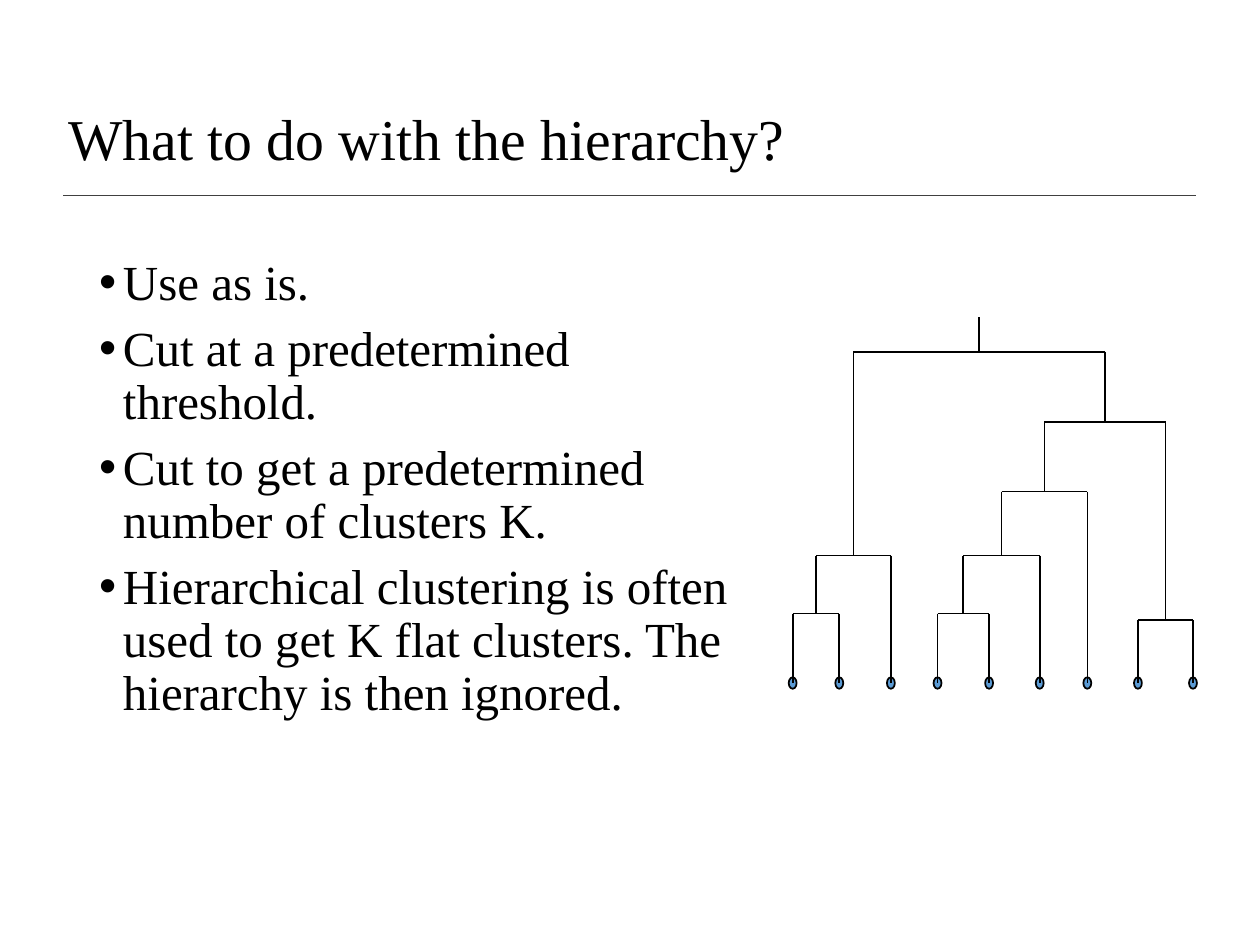
from lxml.etree import SubElement
from pptx import Presentation
from pptx.dml.color import RGBColor
from pptx.enum.shapes import MSO_CONNECTOR, MSO_SHAPE
from pptx.enum.text import MSO_ANCHOR as ANCHOR, PP_ALIGN as ALIGN
from pptx.oxml.ns import qn
from pptx.util import Cm, Pt

COLORS = {"text": "000000", "branch": "000000", "rule": "404040", "leaf": "5B9BD5"}
FONT = "Times New Roman"

TITLE = "What to do with the hierarchy?"
BULLETS = [
    "Use as is.",
    "Cut at a predetermined threshold.",
    "Cut to get a predetermined number of clusters K.",
    "Hierarchical clustering is often used to get K flat clusters. "
    "The hierarchy is then ignored.",
]

# Dendrogram in cm: a leaf is its x, a merge is (y, left, right)
LEAF_Y, ROOT_TOP = 13.77, 6.4
LEAF_W, LEAF_H = 0.16, 0.23
LEFT_TREE = (11.2, (12.37, 15.98, 16.92), 17.96)
RIGHT_TREE = (8.51,
              (9.91, (11.2, (12.37, 18.9, 19.94), 20.96), 21.92),
              (12.5, 22.94, 24.05))
TREE = (7.09, LEFT_TREE, RIGHT_TREE)


def color(name):
    return RGBColor.from_string(COLORS[name])


def write(tf, paragraphs, size, before=0, bullet=None, indent=0.48, anchor=ANCHOR.TOP):
    tf.word_wrap = True
    tf.vertical_anchor = anchor
    for i, text in enumerate(paragraphs):
        p = tf.add_paragraph() if i else tf.paragraphs[0]
        p.alignment = ALIGN.LEFT
        p.line_spacing = 0.9
        p.space_before = Pt(before)
        r = p.add_run()
        r.text = text
        r.font.name = FONT
        r.font.size = Pt(size)
        r.font.color.rgb = color("text")
        if bullet:
            pPr = p._p.get_or_add_pPr()
            pPr.set("marL", str(Cm(indent)))
            pPr.set("indent", str(-Cm(indent)))
            SubElement(pPr, qn("a:buFont"), typeface="Arial")
            SubElement(pPr, qn("a:buChar"), char=bullet)


def place(sp, left, top, width, height):
    sp.left, sp.top, sp.width, sp.height = map(Cm, (left, top, width, height))


def add_line(s, x1, y1, x2, y2, line="branch"):
    cn = s.shapes.add_connector(MSO_CONNECTOR.STRAIGHT, *map(Cm, (x1, y1, x2, y2)))
    cn.line.color.rgb = color(line)
    cn.line.width = Pt(1)
    SubElement(cn._element.spPr, qn("a:effectLst"))


def add_leaf(s, x):
    sp = s.shapes.add_shape(MSO_SHAPE.OVAL, Cm(x - LEAF_W / 2), Cm(LEAF_Y - LEAF_H / 2),
                            Cm(LEAF_W), Cm(LEAF_H))
    sp.shadow.inherit = False
    sp.fill.solid()
    sp.fill.fore_color.rgb = color("leaf")
    sp.line.color.rgb = color("branch")
    sp.line.width = Pt(1)


def add_tree(s, node, parent_y):
    """Draw a node with the branch up to its parent; return the node's x."""
    if isinstance(node, tuple):
        y, left, right = node
        x1, x2 = add_tree(s, left, y), add_tree(s, right, y)
        add_line(s, x1, y, x2, y)
        x = (x1 + x2) / 2
    else:
        x, y = node, LEAF_Y
        add_leaf(s, x)
    add_line(s, x, parent_y, x, y)
    return x


def main():
    prs = Presentation()
    prs.slide_width, prs.slide_height = Cm(25.4), Cm(19.05)
    s = prs.slides.add_slide(prs.slide_layouts[5])

    add_line(s, 1.27, 3.94, 24.1, 3.94, line="rule")
    title = s.shapes.title
    place(title, 1.12, 1.02, 22.56, 3.68)
    write(title.text_frame, [TITLE], size=33, anchor=ANCHOR.MIDDLE)

    body = s.shapes.add_textbox(0, 0, 0, 0)
    place(body, 1.75, 5.08, 13.61, 12.09)
    write(body.text_frame, BULLETS, size=28, before=7.5, bullet="•")

    add_tree(s, TREE, ROOT_TOP)
    prs.save("out.pptx")


if __name__ == "__main__":
    main()
